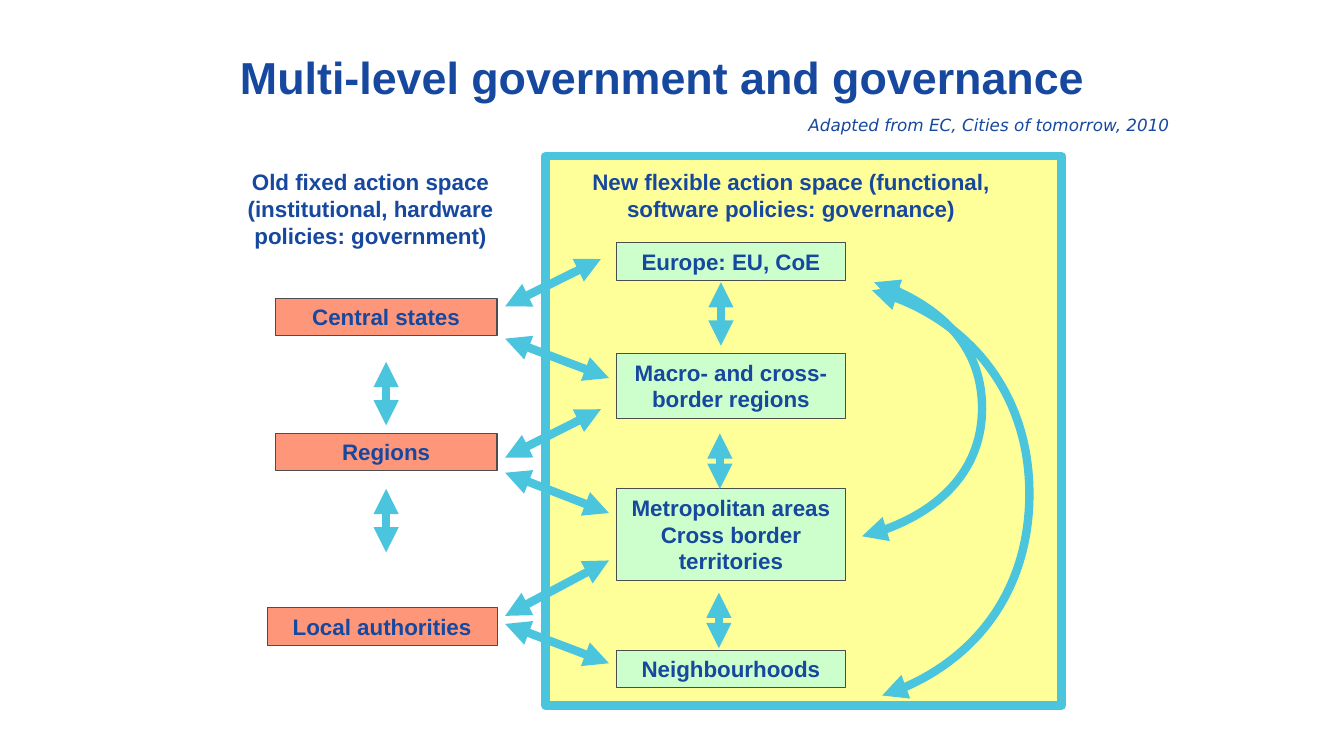
from pptx import Presentation
from pptx.dml.color import RGBColor
from pptx.enum.shapes import MSO_CONNECTOR, MSO_SHAPE
from pptx.enum.text import MSO_ANCHOR, MSO_AUTO_SIZE, PP_ALIGN
from pptx.oxml.ns import qn
from pptx.util import Inches, Pt
from lxml.etree import SubElement

COLORS = {
    "text": "16489F",
    "arrow": "4BC5DE",
    "panel": "FFFF99",
    "old": "FE967A",
    "new": "CCFFCC",
    "border": "4D4D4D",
}


def rgb(name):
    return RGBColor.from_string(COLORS[name])


def write(tf, text, size=16, font="Arial", bold=True, italic=False,
          align=PP_ALIGN.CENTER, anchor=MSO_ANCHOR.TOP, wrap=True):
    tf.word_wrap = wrap
    tf.auto_size = MSO_AUTO_SIZE.NONE
    tf.vertical_anchor = anchor
    p = tf.paragraphs[0]
    p.alignment = align
    r = p.add_run()
    r.text = text
    r.font.size = Pt(size)
    r.font.name = font
    r.font.bold = bold
    r.font.italic = italic
    r.font.color.rgb = rgb("text")


def add_text(slide, box, text, **fmt):
    sp = slide.shapes.add_textbox(*map(Inches, box))
    write(sp.text_frame, text, **fmt)


def add_box(slide, box, fill, line="border", width=0.75, text=None):
    sp = slide.shapes.add_shape(MSO_SHAPE.RECTANGLE, *map(Inches, box))
    sp.shadow.inherit = False
    sp.fill.solid()
    sp.fill.fore_color.rgb = rgb(fill)
    sp.line.color.rgb = rgb(line)
    sp.line.width = Pt(width)
    if text:
        write(sp.text_frame, text)


def style_arrow(sp):
    """Give a connector or curve the thick line with a head at both ends."""
    sp.line.color.rgb = rgb("arrow")
    sp.line.width = Pt(6)
    ln = sp.line._get_or_add_ln()
    for end in ("a:headEnd", "a:tailEnd"):
        SubElement(ln, qn(end), type="triangle")


def add_arrow(slide, x1, y1, x2, y2):
    cxn = slide.shapes.add_connector(
        MSO_CONNECTOR.STRAIGHT, *map(Inches, (x1, y1, x2, y2)))
    style_arrow(cxn)
    SubElement(cxn._element.spPr, qn("a:effectLst"))


def add_curve(slide, points):
    """Draw a Bezier curve: a start, then two controls and an end per segment."""
    start, *rest = [(Inches(x), Inches(y)) for x, y in points]
    builder = slide.shapes.build_freeform(*start)
    builder.add_line_segments(rest, close=False)
    sp = builder.convert_to_shape()
    sp.shadow.inherit = False
    sp.fill.background()
    style_arrow(sp)
    outline = sp._element.find(".//" + qn("a:path"))
    steps = outline.findall(qn("a:lnTo"))
    for i in range(0, len(steps), 3):
        bezier = SubElement(outline, qn("a:cubicBezTo"))
        for step in steps[i:i + 3]:
            bezier.append(step[0])
            outline.remove(step)


def add_heading(slide, box):
    x, y, w, h = box
    title = slide.shapes.title
    title.left, title.top, title.width, title.height = map(Inches, box)
    write(title.text_frame, "Multi-level government and governance", size=32,
          align=PP_ALIGN.LEFT, anchor=MSO_ANCHOR.MIDDLE)
    add_text(slide, (x + 5.64, y + 0.96, 3.93, 0.3),
             "Adapted from EC, Cities of tomorrow, 2010", size=12,
             font="DejaVu Sans", bold=False, italic=True,
             align=PP_ALIGN.LEFT, anchor=MSO_ANCHOR.MIDDLE, wrap=False)


def add_old_space(slide, box):
    x, y, w, h = box
    add_text(slide, (x, y, w, 0.91),
             "Old fixed action space (institutional, hardware policies: government)")
    right = x + 2.75
    for text, top, width in (("Central states", 1.34, 2.2),
                             ("Regions", 2.68, 2.2),
                             ("Local authorities", 4.41, 2.28)):
        add_box(slide, (right - width, y + top, width, 0.37), "old", text=text)
    for top in (1.97, 3.23):
        add_arrow(slide, x + 1.65, y + top, x + 1.65, y + top + 0.63)


def add_new_space(slide, box):
    x, y, w, h = box
    add_box(slide, box, "panel", line="arrow", width=6)
    add_text(slide, (x + 0.23, y + 0.07, 4.41, 0.64),
             "New flexible action space (functional, software policies: governance)")
    for text, top, height in (
            ("Europe: EU, CoE", 0.86, 0.37),
            ("Macro- and cross-border regions", 1.96, 0.64),
            ("Metropolitan areas Cross border territories", 3.3, 0.91),
            ("Neighbourhoods", 4.9, 0.37)):
        add_box(slide, (x + 0.7, y + top, 2.28, height), "new", text=text)
    for dx, top, bottom in ((1.74, 1.25, 1.88), (1.73, 2.75, 3.3),
                            (1.72, 4.33, 4.88)):
        add_arrow(slide, x + dx, y + top, x + dx, y + bottom)
    europe_to_neighbourhoods = (
        (3.24, 1.33), (4.16, 1.56), (4.8, 2.4), (4.8, 3.35),
        (4.8, 4.28), (4.2, 5.09), (3.34, 5.35))
    europe_to_metropolitan = (
        (3.26, 1.25), (3.9, 1.45), (4.33, 1.94), (4.33, 2.5),
        (4.33, 3.09), (3.84, 3.61), (3.14, 3.77))
    for curve in (europe_to_neighbourhoods, europe_to_metropolitan):
        add_curve(slide, [(x + dx, y + dy) for dx, dy in curve])


def add_links(slide, box):
    """Join each old level to the new levels above and below it."""
    x, y, w, h = box
    for start, end, dx in ((0.47, 0, 0.95), (0.79, 1.18, w),
                           (1.97, 1.49, 0.95), (2.12, 2.52, w),
                           (3.54, 2.99, w), (3.62, h, w)):
        add_arrow(slide, x, y + start, x + dx, y + end)


def main():
    prs = Presentation()
    prs.slide_width, prs.slide_height = Inches(13.33), Inches(7.5)
    slide = prs.slides.add_slide(prs.slide_layouts[5])
    add_heading(slide, (2.28, 0.13, 8.69, 1.26))
    add_new_space(slide, (5.41, 1.55, 5.12, 5.45))
    add_old_space(slide, (2.18, 1.62, 2.99, 4.78))
    add_links(slide, (5.01, 2.57, 1.03, 4.01))
    prs.save("out.pptx")


if __name__ == "__main__":
    main()
